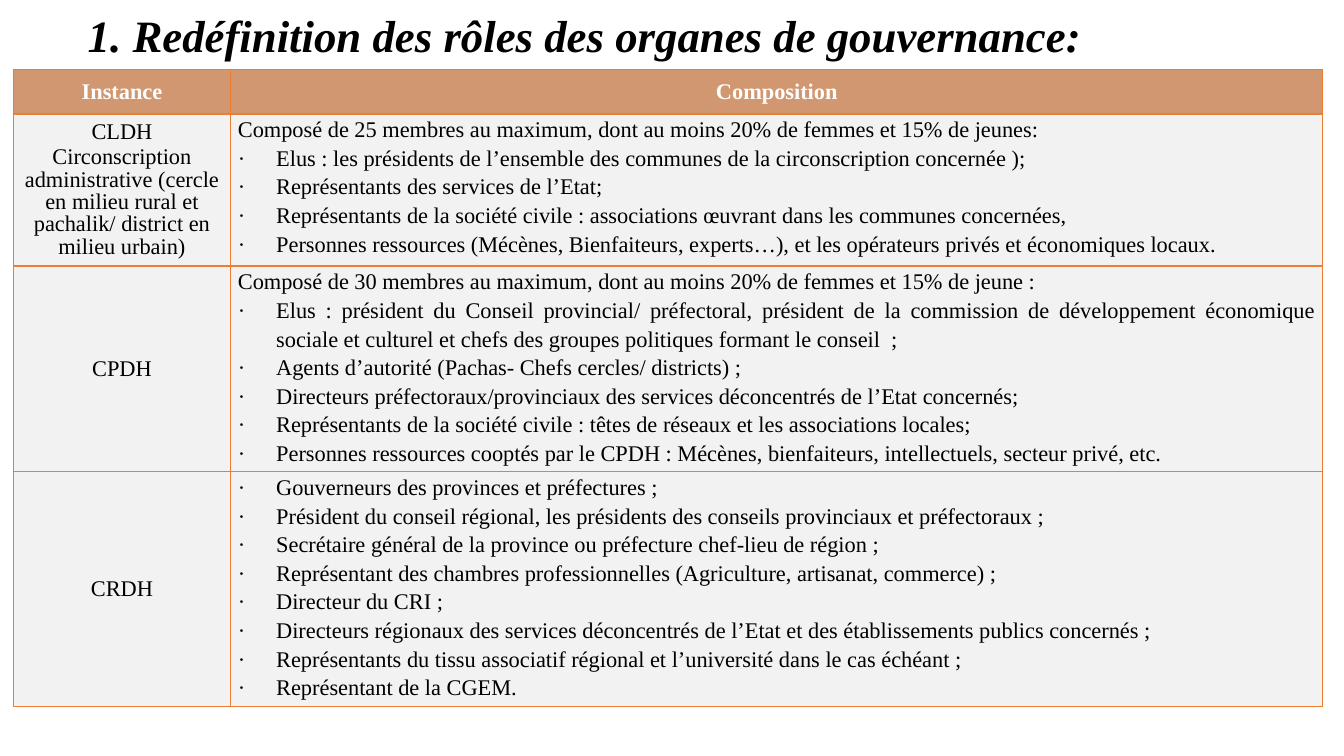
from lxml import etree
from pptx import Presentation
from pptx.dml.color import RGBColor
from pptx.enum.text import MSO_ANCHOR, PP_ALIGN
from pptx.oxml.ns import qn
from pptx.util import Inches, Pt

LEFT, CENTER, JUSTIFY = PP_ALIGN.LEFT, PP_ALIGN.CENTER, PP_ALIGN.JUSTIFY
MIDDLE, TOP = MSO_ANCHOR.MIDDLE, MSO_ANCHOR.TOP
FONT = "Times New Roman"
COLORS = {"text": "000000", "header text": "FFFFFF", "header": "D19770",
          "body": "F2F2F2", "border": "ED7D31"}

# Each body row: instance lines, introduction, bulleted members
ROWS = [
    (["CLDH", "Circonscription administrative (cercle en milieu rural et pachalik/ district en milieu urbain)"],
     "Composé de 25 membres au maximum, dont au moins 20% de femmes et 15% de jeunes:",
     ["Elus : les présidents de l’ensemble des communes de la circonscription concernée );",
      "Représentants des services de l’Etat;",
      "Représentants de la société civile : associations œuvrant dans les communes concernées,",
      "Personnes ressources (Mécènes, Bienfaiteurs, experts…), et les opérateurs privés et économiques locaux."]),
    (["CPDH"],
     "Composé de 30 membres au maximum, dont au moins 20% de femmes et 15% de jeune :",
     ["Elus : président du Conseil provincial/ préfectoral, président de la commission de développement "
      "économique sociale et culturel et chefs des groupes politiques formant le conseil  ;",
      "Agents d’autorité (Pachas- Chefs cercles/ districts) ;",
      "Directeurs préfectoraux/provinciaux des services déconcentrés de l’Etat concernés;",
      "Représentants de la société civile : têtes de réseaux et les associations locales;",
      "Personnes ressources cooptés par le CPDH : Mécènes, bienfaiteurs, intellectuels, secteur privé, etc."]),
    (["CRDH"],
     None,
     ["Gouverneurs des provinces et préfectures ;",
      "Président du conseil régional, les présidents des conseils provinciaux et préfectoraux ;",
      "Secrétaire général de la province ou préfecture chef-lieu de région ;",
      "Représentant des chambres professionnelles (Agriculture, artisanat, commerce) ;",
      "Directeur du CRI ;",
      "Directeurs régionaux des services déconcentrés de l’Etat et des établissements publics concernés ;",
      "Représentants du tissu associatif régional et l’université dans le cas échéant ;",
      "Représentant de la CGEM."]),
]


def add_line(frame, text, align, spacing=1.0, size=16, color="text", bold=False, bullet=False):
    """Write one paragraph, using the empty first one when it is free."""
    para = frame.paragraphs[0]
    if para.runs:
        para = frame.add_paragraph()
    if bullet:
        props = para._p.get_or_add_pPr()
        props.set("marL", str(Inches(0.38)))
        props.set("indent", str(-Inches(0.38)))
        etree.SubElement(props, qn("a:buFont")).set("typeface", FONT)
        etree.SubElement(props, qn("a:buChar")).set("char", "·")
    para.alignment = align
    para.line_spacing = spacing
    span = para.add_run()
    span.text = text
    span.font.name = FONT
    span.font.size = Pt(size)
    span.font.bold = bold
    span.font.color.rgb = RGBColor.from_string(COLORS[color])
    return para


def style_cell(cell, fill, anchor, bottom=1):
    """Draw the four borders, then fill the cell."""
    props = cell._tc.get_or_add_tcPr()
    for side, width in (("L", 1), ("R", 1), ("T", 1), ("B", bottom)):
        line = etree.SubElement(props, qn("a:ln" + side), w=str(Pt(width)))
        solid = etree.SubElement(line, qn("a:solidFill"))
        etree.SubElement(solid, qn("a:srgbClr"), val=COLORS["border"])
    cell.fill.solid()
    cell.fill.fore_color.rgb = RGBColor.from_string(COLORS[fill])
    cell.vertical_anchor = anchor


deck = Presentation()
deck.slide_width, deck.slide_height = Inches(13.33), Inches(7.5)
page = deck.slides.add_slide(deck.slide_layouts[5])

# Title
title = page.shapes.title
title.left, title.top = Inches(0.77), Inches(-0.35)
title.width, title.height = Inches(11.5), Inches(1.45)
title.text_frame.vertical_anchor = MIDDLE
heading = add_line(title.text_frame, "1. Redéfinition des rôles des organes de gouvernance:",
                   LEFT, 0.9, 32, bold=True)
heading.runs[0].font.italic = True

# Table grid
table = page.shapes.add_table(len(ROWS) + 1, 2, Inches(0.13), Inches(0.69),
                              Inches(12.99), Inches(6.32)).table
for column, width in zip(table.columns, (2.16, 10.83)):
    column.width = Inches(width)
for row, height in zip(table.rows, (0.44, 1.51, 2.04, 2.33)):
    row.height = Inches(height)

# Header row
for index, label in enumerate(("Instance", "Composition")):
    cell = table.cell(0, index)
    style_cell(cell, "header", MIDDLE, bottom=2)
    add_line(cell.text_frame, label, CENTER, color="header text", bold=True)

# Body rows
for index, (names, intro, members) in enumerate(ROWS, start=1):
    instance, composition = table.cell(index, 0), table.cell(index, 1)
    style_cell(instance, "body", MIDDLE)
    for name in names:
        para = add_line(instance.text_frame, name, CENTER, 0.9 if len(names) > 1 else 1.0)
        if len(names) > 1:
            para.space_after = Pt(2.4)

    style_cell(composition, "body", TOP)
    composition.margin_left = composition.margin_right = Inches(0.07)
    composition.margin_top = composition.margin_bottom = 0
    if intro:
        add_line(composition.text_frame, intro, JUSTIFY, 1.15)
    for member in members:
        add_line(composition.text_frame, member, JUSTIFY, 1.15, bullet=True)

deck.save("out.pptx")
